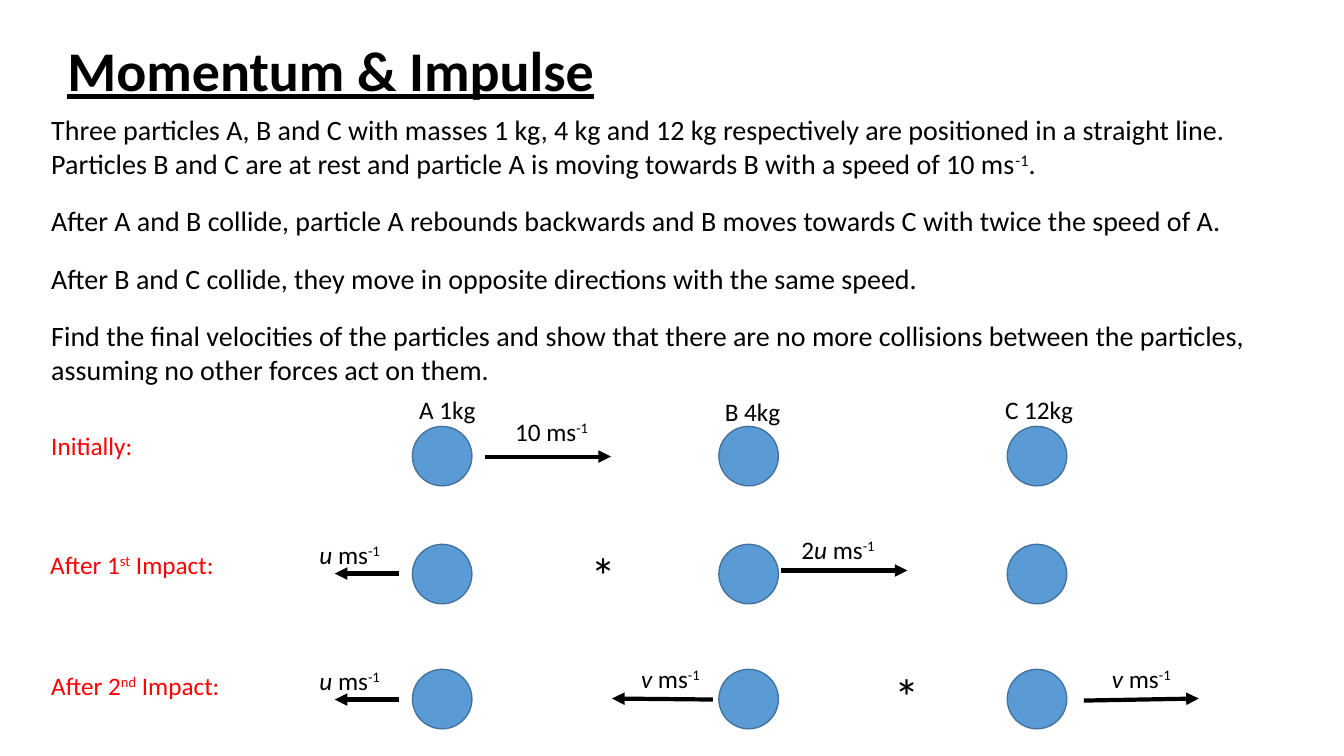
from itertools import product

from lxml import etree
from pptx import Presentation
from pptx.dml.color import RGBColor
from pptx.enum.shapes import MSO_CONNECTOR, MSO_SHAPE
from pptx.enum.text import MSO_AUTO_SIZE
from pptx.oxml.ns import qn
from pptx.util import Pt

PX = 9144
OVAL = MSO_SHAPE.OVAL
STRAIGHT = MSO_CONNECTOR.STRAIGHT
GROW = MSO_AUTO_SIZE.SHAPE_TO_FIT_TEXT
HUES = {"ink": "000000", "red": "FF0000", "blue": "5B9BD5", "edge": "43739E"}

TITLE = "Momentum & Impulse"
TASK = [
    "Three particles A, B and C with masses 1 kg, 4 kg and 12 kg respectively "
    "are positioned in a straight line.",
    "Particles B and C are at rest and particle A is moving towards B with a "
    "speed of 10 ms|^-1|.",
    "After A and B collide, particle A rebounds backwards and B moves towards C "
    "with twice the speed of A.",
    "After B and C collide, they move in opposite directions with the same speed.",
    "Find the final velocities of the particles and show that there are no more "
    "collisions between the particles, assuming no other forces act on them.",
]
COLS = [409, 713, 999]
ROWS = [423, 540, 664]
NAMES = [
    ("A 1kg", 406, 386, 77),
    ("B 4kg", 709, 388, 76),
    ("C 12kg", 987, 386, 88),
]
STAGES = [
    ("Initially:", 41, 422, 102),
    ("After 1|^st| Impact:", 40, 540, 186),
    ("After 2|^nd| Impact:", 41, 660, 198),
]
SPEEDS = [
    ("10 ms|^-1", 501, 408, 95),
    ("~u| ms|^-1", 307, 530, 83),
    ("2|~u| ms|^-1", 785, 525, 96),
    ("~u| ms|^-1", 307, 655, 83),
    ("~v| ms|^-1", 626, 653, 81),
    ("~v| ms|^-1", 1093, 653, 81),
]
ARROWS = [
    (481, 453, 606, 453),
    (396, 569, 332, 569),
    (775, 566, 900, 566),
    (396, 694, 332, 694),
    (707, 694, 607, 693),
    (1075, 695, 1189, 693),
]
HITS = [(576, 535), (877, 655)]


def color(name):
    """Return the named colour."""
    return RGBColor.from_string(HUES[name])


def write(slide, lines, x, y, w, h=40, size=18, hue="ink", wrap=False, gaps=(), **style):
    """Add text; in a line, | parts runs, ^ raises one and ~ slants one."""
    frame = slide.shapes.add_textbox(x * PX, y * PX, w * PX, h * PX).text_frame
    frame.word_wrap = wrap
    frame.auto_size = GROW
    for i, line in enumerate(lines):
        para = frame.add_paragraph() if i else frame.paragraphs[0]
        if i in gaps:
            para.space_before = Pt(17)
        for part in line.split("|"):
            run = para.add_run()
            run.text = part.lstrip("^~")
            font = run.font
            font.name, font.size = "Calibri", Pt(size)
            font.color.rgb = color(hue)
            for key, value in style.items():
                setattr(font, key, value)
            if part.startswith("~"):
                font.italic = True
            if part.startswith("^"):
                run._r.get_or_add_rPr().set("baseline", "30000")


def add_dot(slide, x, y):
    """Add one particle."""
    dot = slide.shapes.add_shape(OVAL, x * PX, y * PX, 59 * PX, 59 * PX)
    dot.shadow.inherit = False
    dot.fill.solid()
    dot.fill.fore_color.rgb = color("blue")
    dot.line.color.rgb = color("edge")
    dot.line.width = Pt(1)


def add_arrow(slide, *ends):
    """Add a velocity arrow from the first point to the second."""
    arrow = slide.shapes.add_connector(STRAIGHT, *(end * PX for end in ends))
    arrow.line.color.rgb = color("ink")
    arrow.line.width = Pt(3)
    tip = etree.SubElement(arrow.line._get_or_add_ln(), qn("a:tailEnd"))
    tip.set("type", "triangle")
    etree.SubElement(arrow._element.spPr, qn("a:effectLst"))


def main():
    """Build the slide and save it."""
    deck = Presentation()
    deck.slide_width, deck.slide_height = 1333 * PX, 750 * PX
    slide = deck.slides.add_slide(deck.slide_layouts[6])
    write(slide, [TITLE], 57, 30, 548, 77, size=40, bold=True, underline=True)
    write(slide, TASK, 41, 107, 1260, 286, size=20, wrap=True, gaps=(2, 3, 4))
    for y, x in product(ROWS, COLS):
        add_dot(slide, x, y)
    for ends in ARROWS:
        add_arrow(slide, *ends)
    for text, *place in NAMES + SPEEDS:
        write(slide, [text], *place)
    for text, *place in STAGES:
        write(slide, [text], *place, hue="red", wrap=True)
    for x, y in HITS:
        write(slide, ["*"], x, y, 45, 71, size=36)
    deck.save("out.pptx")


if __name__ == "__main__":
    main()
